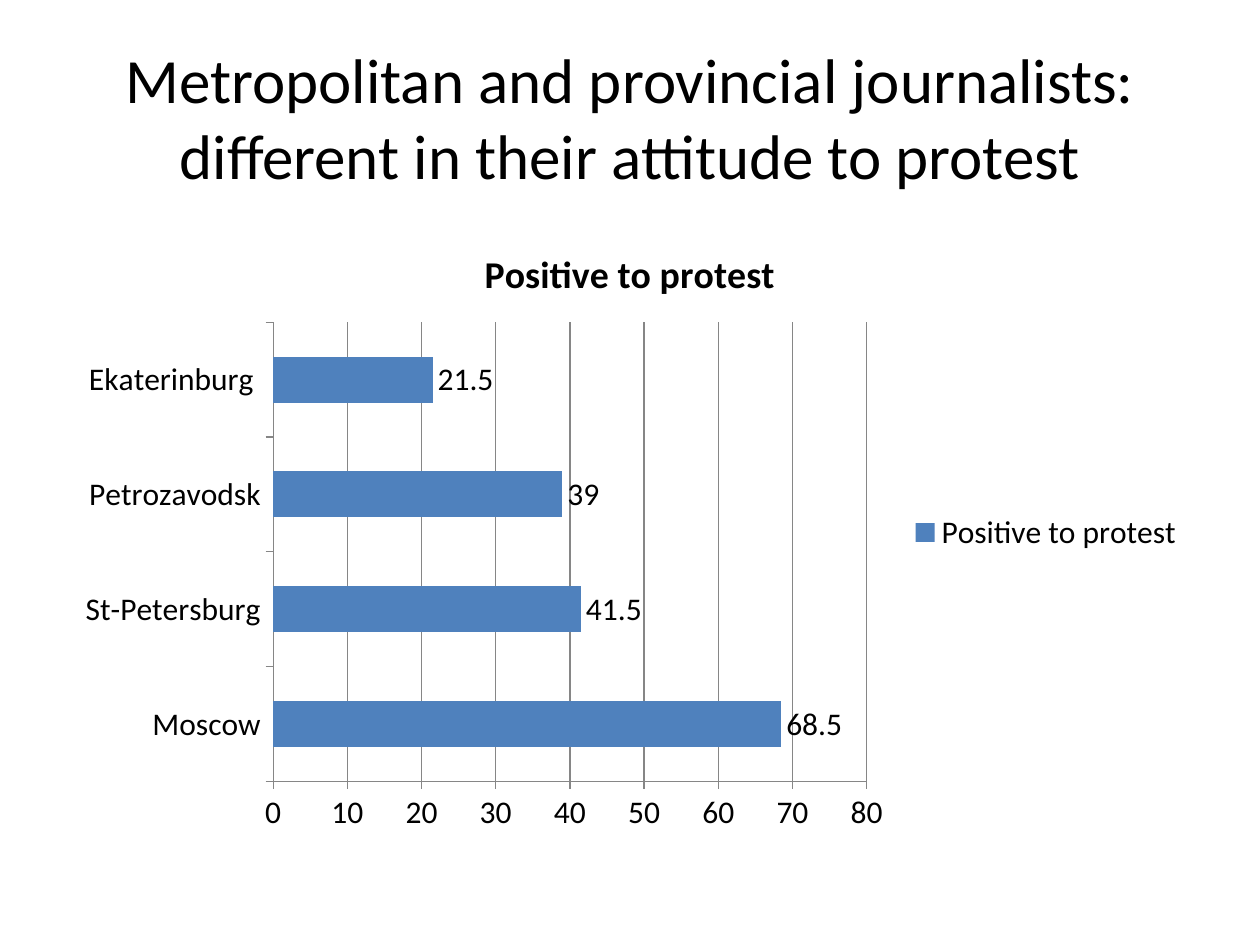
from dataclasses import dataclass

from pptx import Presentation
from pptx.chart.data import CategoryChartData
from pptx.dml.color import RGBColor
from pptx.enum.chart import XL_CHART_TYPE as ChartType
from pptx.enum.chart import XL_LABEL_POSITION as LabelPosition
from pptx.enum.chart import XL_LEGEND_POSITION as LegendPosition
from pptx.enum.chart import XL_TICK_MARK as TickMark
from pptx.enum.text import MSO_ANCHOR as Anchor
from pptx.enum.text import PP_ALIGN as Align
from pptx.util import Cm, Pt

COLORS = {"text": "000000", "bar": "4F81BD", "axis": "868686"}
FONT = "Calibri"
MARGIN, CONTENT_WIDTH = Cm(1.27), Cm(22.86)


@dataclass
class CityShare:
    city: str
    positive: float


SHARES = [
    CityShare("Moscow", 68.5),
    CityShare("St-Petersburg", 41.5),
    CityShare("Petrozavodsk", 39),
    CityShare("Ekaterinburg ", 21.5),
]


def style_font(font, size: float, bold: bool = False) -> None:
    font.name, font.size, font.bold = FONT, Pt(size), bold
    font.color.rgb = RGBColor.from_string(COLORS["text"])


def style_line(line) -> None:
    line.width = Pt(0.75)
    line.color.rgb = RGBColor.from_string(COLORS["axis"])


def add_heading(slide, wording: str) -> None:
    heading = slide.shapes.add_textbox(MARGIN, Cm(0.76), CONTENT_WIDTH, Cm(3.18))
    frame = heading.text_frame
    frame.word_wrap = True
    frame.vertical_anchor = Anchor.MIDDLE
    frame.text = wording
    paragraph = frame.paragraphs[0]
    paragraph.alignment = Align.CENTER
    style_font(paragraph.runs[0].font, 36)


def add_protest_chart(slide, caption: str, shares: list[CityShare]) -> None:
    data = CategoryChartData()
    data.categories = [share.city for share in shares]
    data.add_series(caption, [share.positive for share in shares])
    chart = slide.shapes.add_chart(
        ChartType.BAR_CLUSTERED, MARGIN, Cm(4.45), CONTENT_WIDTH, Cm(12.57), data
    ).chart
    style_font(chart.font, 18)

    # Chart title and legend
    chart.has_title = True
    title_frame = chart.chart_title.text_frame
    title_frame.text = caption
    style_font(title_frame.paragraphs[0].runs[0].font, 21.6, bold=True)
    chart.chart_title.include_in_layout = False
    chart.has_legend = True
    chart.legend.position = LegendPosition.RIGHT
    chart.legend.include_in_layout = False

    # Axes and gridlines
    for axis in (chart.category_axis, chart.value_axis):
        axis.major_tick_mark = TickMark.OUTSIDE
        axis.minor_tick_mark = TickMark.NONE
        style_line(axis.format.line)
    scale = chart.value_axis
    scale.minimum_scale, scale.maximum_scale, scale.major_unit = 0, 80, 10
    scale.has_major_gridlines = True
    style_line(scale.major_gridlines.format.line)

    # Bars with their values
    plot = chart.plots[0]
    plot.gap_width = 150
    plot.vary_by_categories = False
    bars = plot.series[0]
    bars.format.fill.solid()
    bars.format.fill.fore_color.rgb = RGBColor.from_string(COLORS["bar"])
    bars.data_labels.show_value = True
    bars.data_labels.position = LabelPosition.OUTSIDE_END


def main() -> None:
    deck = Presentation()
    deck.slide_width, deck.slide_height = Cm(25.4), Cm(19.05)
    slide = deck.slides.add_slide(deck.slide_layouts[6])
    add_heading(
        slide,
        "Metropolitan and provincial journalists: "
        "different in their attitude to protest",
    )
    add_protest_chart(slide, "Positive to protest", SHARES)
    deck.save("out.pptx")


if __name__ == "__main__":
    main()
